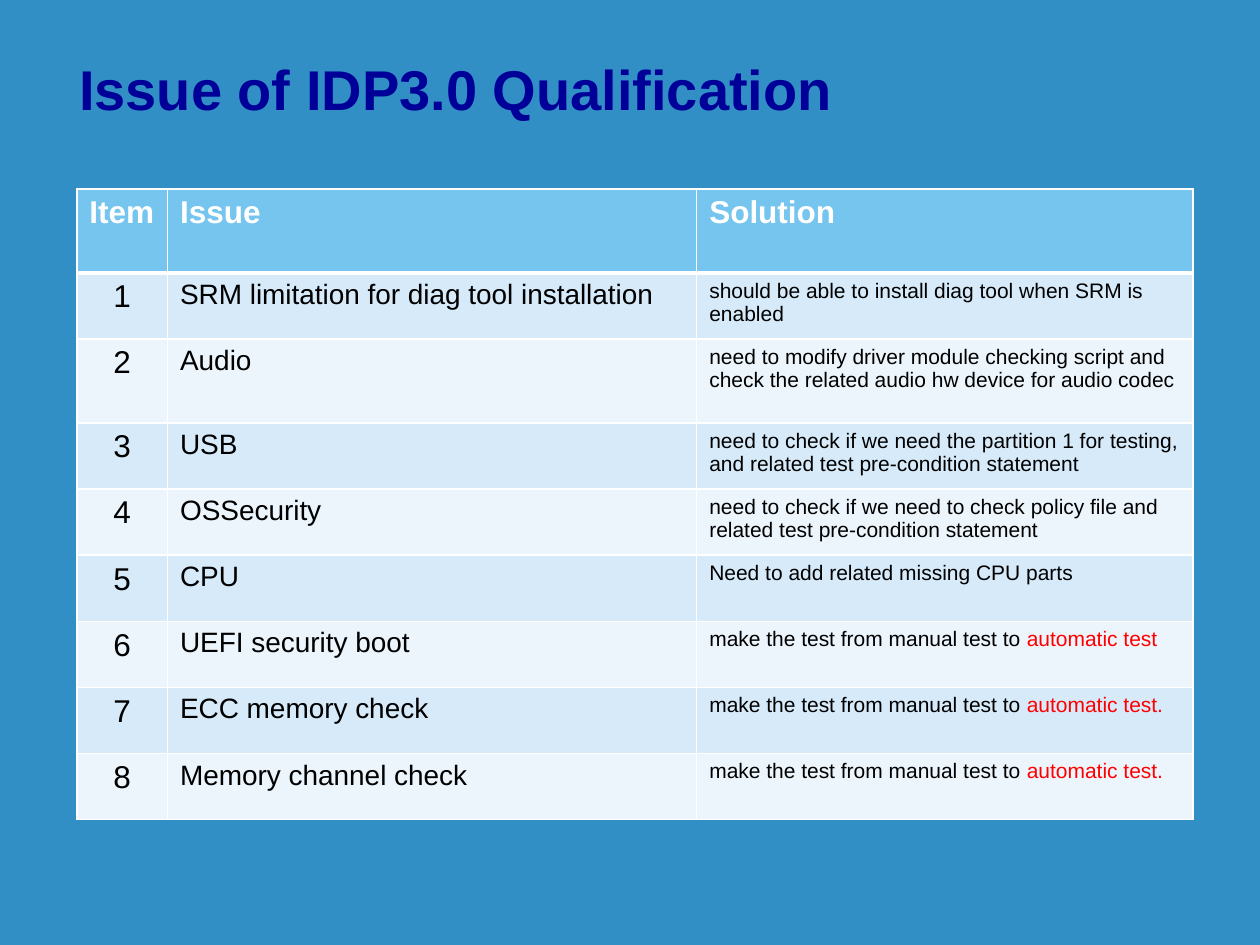
from lxml.etree import SubElement
from pptx import Presentation
from pptx.dml.color import RGBColor
from pptx.enum.text import MSO_ANCHOR, PP_ALIGN
from pptx.oxml import parse_xml
from pptx.oxml.ns import nsdecls, qn
from pptx.util import Inches, Pt

WHITE, BLACK, RED, NAVY = "FFFFFF", "000000", "FF0000", "000099"
BACKGROUND, HEADER, BANDS = "318FC5", "76C5EF", ("D6EAF9", "ECF5FC")
MANUAL = "make the test from manual test to "

HEADINGS = ("Item", "Issue", "Solution")
# Each issue with its solution, given as (text, colour) runs
ISSUES = [
    ("SRM limitation for diag tool installation",
     [("should be able to install diag tool when SRM is enabled", BLACK)]),
    ("Audio",
     [("need to modify driver module checking script and check the related "
       "audio hw device for audio codec", BLACK)]),
    ("USB",
     [("need to check if we need the partition 1 for testing, and related "
       "test pre-condition statement", BLACK)]),
    ("OSSecurity",
     [("need to check if we need to check policy file and related test "
       "pre-condition statement", BLACK)]),
    ("CPU", [("Need to add related missing CPU parts", BLACK)]),
    ("UEFI security boot", [(MANUAL, BLACK), ("automatic test", RED)]),
    ("ECC memory check", [(MANUAL, BLACK), ("automatic test.", RED)]),
    ("Memory channel check", [(MANUAL, BLACK), ("automatic test.", RED)]),
]


def color(value):
    return RGBColor.from_string(value)


class SlideBuilder:
    """Places elements on a grid of 100 columns by 75 rows."""

    font = "Arial"

    def __init__(self, presentation):
        self.slide = presentation.slides.add_slide(presentation.slide_layouts[6])
        self.unit = presentation.slide_width / 100
        fill = self.slide.background.fill
        fill.solid()
        fill.fore_color.rgb = color(BACKGROUND)

    def grid(self, *units):
        return [round(unit * self.unit) for unit in units]

    def run(self, paragraph, text, size, text_color, bold=False):
        run = paragraph.add_run()
        run.text = text
        run.font.name = self.font
        run.font.size = Pt(size)
        run.font.bold = bold
        run.font.color.rgb = color(text_color)
        return run

    def title(self, text, *area):
        frame = self.slide.shapes.add_textbox(*self.grid(*area)).text_frame
        frame.word_wrap = True
        frame.vertical_anchor = MSO_ANCHOR.MIDDLE
        paragraph = frame.paragraphs[0]
        paragraph.line_spacing = 0.85
        run = self.run(paragraph, text, 32, NAVY, bold=True)
        # Light text shadow towards the lower right
        shadow = parse_xml(
            f'<a:effectLst {nsdecls("a")}><a:outerShdw dist="38100" dir="2700000">'
            '<a:srgbClr val="DDDDDD"/></a:outerShdw></a:effectLst>')
        run.font._element.find(qn("a:solidFill")).addnext(shadow)

    def table(self, left, top, widths, heights):
        area = self.grid(left, top, sum(widths), sum(heights))
        table = self.slide.shapes.add_table(len(heights), len(widths), *area).table
        for column, width in zip(table.columns, self.grid(*widths)):
            column.width = width
        for row, height in zip(table.rows, self.grid(*heights)):
            row.height = height
        return table

    def cell(self, cell, runs, size, fill, bold=False, align=PP_ALIGN.LEFT,
             top_line=1, bottom_line=1):
        paragraph = cell.text_frame.paragraphs[0]
        paragraph.alignment = align
        for text, text_color in runs:
            self.run(paragraph, text, size, text_color, bold)
        # Borders come before the fill in the cell properties
        properties = cell._tc.get_or_add_tcPr()
        for side, width in zip("LRTB", (1, 1, top_line, bottom_line)):
            line = SubElement(properties, qn(f"a:ln{side}"), w=str(Pt(width)))
            solid = SubElement(line, qn("a:solidFill"))
            SubElement(solid, qn("a:srgbClr"), val=WHITE)
        cell.fill.solid()
        cell.fill.fore_color.rgb = color(fill)


def main():
    presentation = Presentation()
    presentation.slide_width = Inches(10)
    presentation.slide_height = Inches(7.5)
    builder = SlideBuilder(presentation)

    builder.title("Issue of IDP3.0 Qualification", 5.3, 3.6, 90.5, 7.6)

    # Header and the second issue are taller than the other rows
    tall, normal = 6.66, 5.25
    heights = [tall, normal, tall] + [normal] * 6
    table = builder.table(6.1, 15, (7.2, 42, 39.4), heights)

    # Header row with a heavy line below
    for column, heading in enumerate(HEADINGS):
        builder.cell(table.cell(0, column), [(heading, WHITE)], 18, HEADER,
                     bold=True, bottom_line=3)

    # Numbered issues in alternating bands
    for number, (issue, solution) in enumerate(ISSUES, start=1):
        band = BANDS[(number - 1) % 2]
        top_line = 3 if number == 1 else 1
        builder.cell(table.cell(number, 0), [(str(number), BLACK)], 18, band,
                     align=PP_ALIGN.CENTER, top_line=top_line)
        builder.cell(table.cell(number, 1), [(issue, BLACK)], 16, band,
                     top_line=top_line)
        builder.cell(table.cell(number, 2), solution, 12, band,
                     top_line=top_line)

    presentation.save("out.pptx")


if __name__ == "__main__":
    main()
